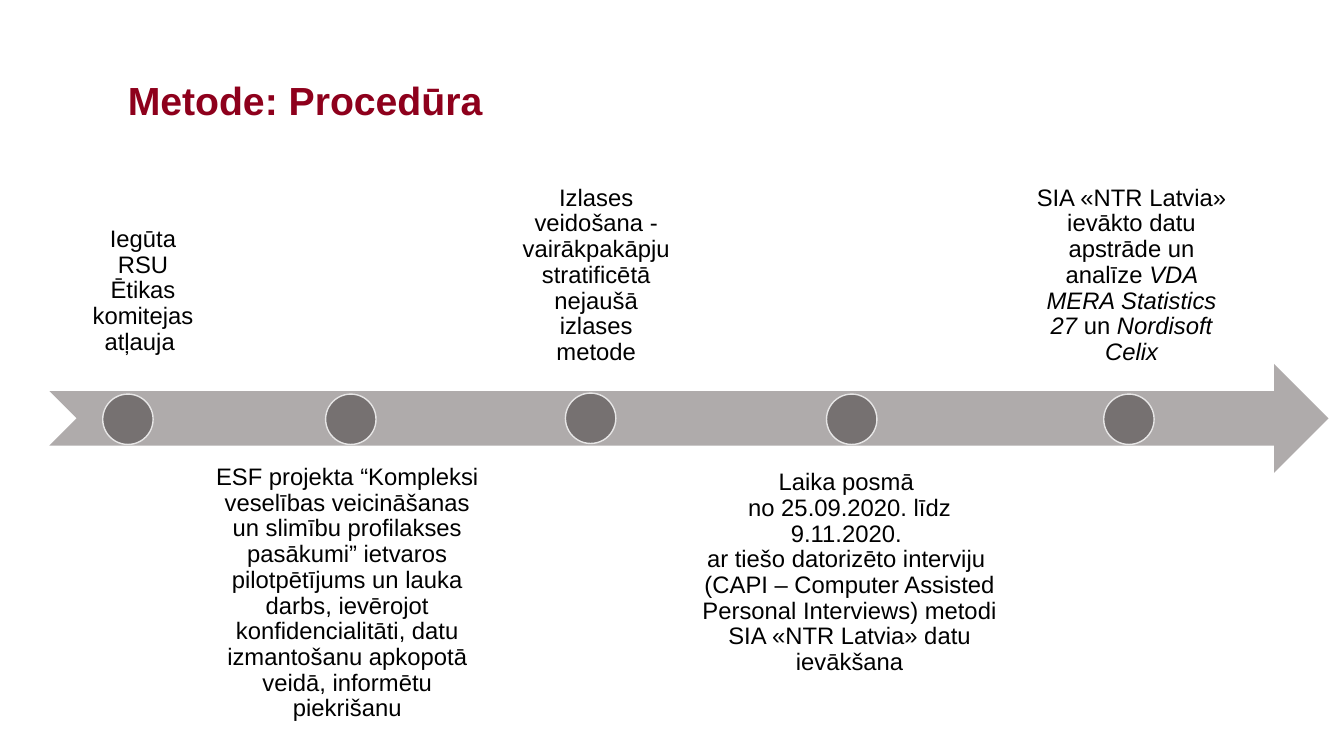
import pptx
import pptx.util
import pptx.dml.color
import pptx.enum.shapes
import pptx.enum.text

Pt = pptx.util.Pt
RGBColor = pptx.dml.color.RGBColor
Shape = pptx.enum.shapes.MSO_SHAPE
Anchor = pptx.enum.text.MSO_ANCHOR
Align = pptx.enum.text.PP_ALIGN

CRIMSON = RGBColor(0x8E, 0x00, 0x1C)
BLACK = RGBColor(0x00, 0x00, 0x00)
ARROW_GREY = RGBColor(0xAF, 0xAB, 0xAB)
DOT_GREY = RGBColor(0x76, 0x71, 0x71)
DOT_EDGE = RGBColor(0xE7, 0xE6, 0xE6)

FONT = "Arial"
LABEL_HEIGHT = 145.4
LABEL_INSET = 9.52
DOT_SIZE = 36

# Each step: dot left and top; label left, top, width and anchor; (text, italic) spans
STEPS = [
    ((73.4, 281.5), (51.8, 118.1, 100.8, Anchor.BOTTOM),
     [("Iegūta RSU Ētikas komitejas atļauja ", False)]),
    ((232.6, 281.5), (143.3, 322.6, 209.5, Anchor.TOP),
     [("ESF projekta “Kompleksi veselības veicināšanas un slimību "
       "profilakses pasākumi” ietvaros pilotpētījums un lauka darbs, "
       "ievērojot konfidencialitāti, datu izmantošanu apkopotā veidā, "
       "informētu piekrišanu", False)]),
    ((403.9, 280.8), (360.7, 125.3, 130.3, Anchor.BOTTOM),
     [("Izlases veidošana - vairākpakāpju stratificētā nejaušā "
       "izlases metode", False)]),
    ((590.4, 281.5), (491, 326.2, 231.8, Anchor.TOP),
     [("Laika posmā \nno 25.09.2020. līdz 9.11.2020. \n"
       "ar tiešo datorizēto interviju \n"
       "(CAPI – Computer Assisted Personal Interviews) metodi "
       "SIA «NTR Latvia» datu ievākšana", False)]),
    ((788.4, 281.5), (729.4, 125.3, 157.7, Anchor.BOTTOM),
     [("SIA «NTR Latvia» ievākto datu apstrāde un analīze ", False),
      ("VDA MERA Statistics 27 ", True),
      ("un", False),
      (" Nordisoft Celix", True)]),
]


def add_text(page, left, top, width, height, spans, size, color=BLACK,
             bold=False, align=Align.LEFT, anchor=Anchor.TOP, inset=0):
    """Add a one-paragraph text box; a newline in a span is a line break."""
    box = page.shapes.add_textbox(Pt(left), Pt(top), Pt(width), Pt(height))
    frame = box.text_frame
    frame.word_wrap = True
    frame.vertical_anchor = anchor
    frame.margin_left = frame.margin_right = Pt(inset)
    frame.margin_top = frame.margin_bottom = Pt(inset)
    para = frame.paragraphs[0]
    para.alignment = align
    para.line_spacing = 0.9
    for text, italic in spans:
        for number, line in enumerate(text.split("\n")):
            if number:
                para.add_line_break()
            span = para.add_run()
            span.text = line
            span.font.name = FONT
            span.font.size = Pt(size)
            span.font.bold = bold
            span.font.italic = italic
            span.font.color.rgb = color


def add_filled_shape(page, kind, left, top, width, height, fill, edge=None):
    shape = page.shapes.add_shape(kind, Pt(left), Pt(top), Pt(width), Pt(height))
    shape.shadow.inherit = False
    shape.fill.solid()
    shape.fill.fore_color.rgb = fill
    if edge is None:
        shape.line.fill.background()
    else:
        shape.line.color.rgb = edge
        shape.line.width = Pt(1)


def add_step(page, dot, label, spans):
    left, top, width, anchor = label
    add_text(page, left, top, width, LABEL_HEIGHT, spans, 17,
             align=Align.CENTER, anchor=anchor, inset=LABEL_INSET)
    add_filled_shape(page, Shape.OVAL, *dot, DOT_SIZE, DOT_SIZE, DOT_GREY, DOT_EDGE)


def main():
    deck = pptx.Presentation()
    deck.slide_width, deck.slide_height = Pt(960), Pt(540)
    page = deck.slides.add_slide(deck.slide_layouts[6])
    add_text(page, 91.3, 58.3, 785.6, 73.4, [("Metode: Procedūra", False)], 28,
             color=CRIMSON, bold=True)
    add_filled_shape(page, Shape.NOTCHED_RIGHT_ARROW, 35.3, 259.9, 913.7, 77.8, ARROW_GREY)
    for dot, label, spans in STEPS:
        add_step(page, dot, label, spans)
    deck.save("out.pptx")


if __name__ == "__main__":
    main()
